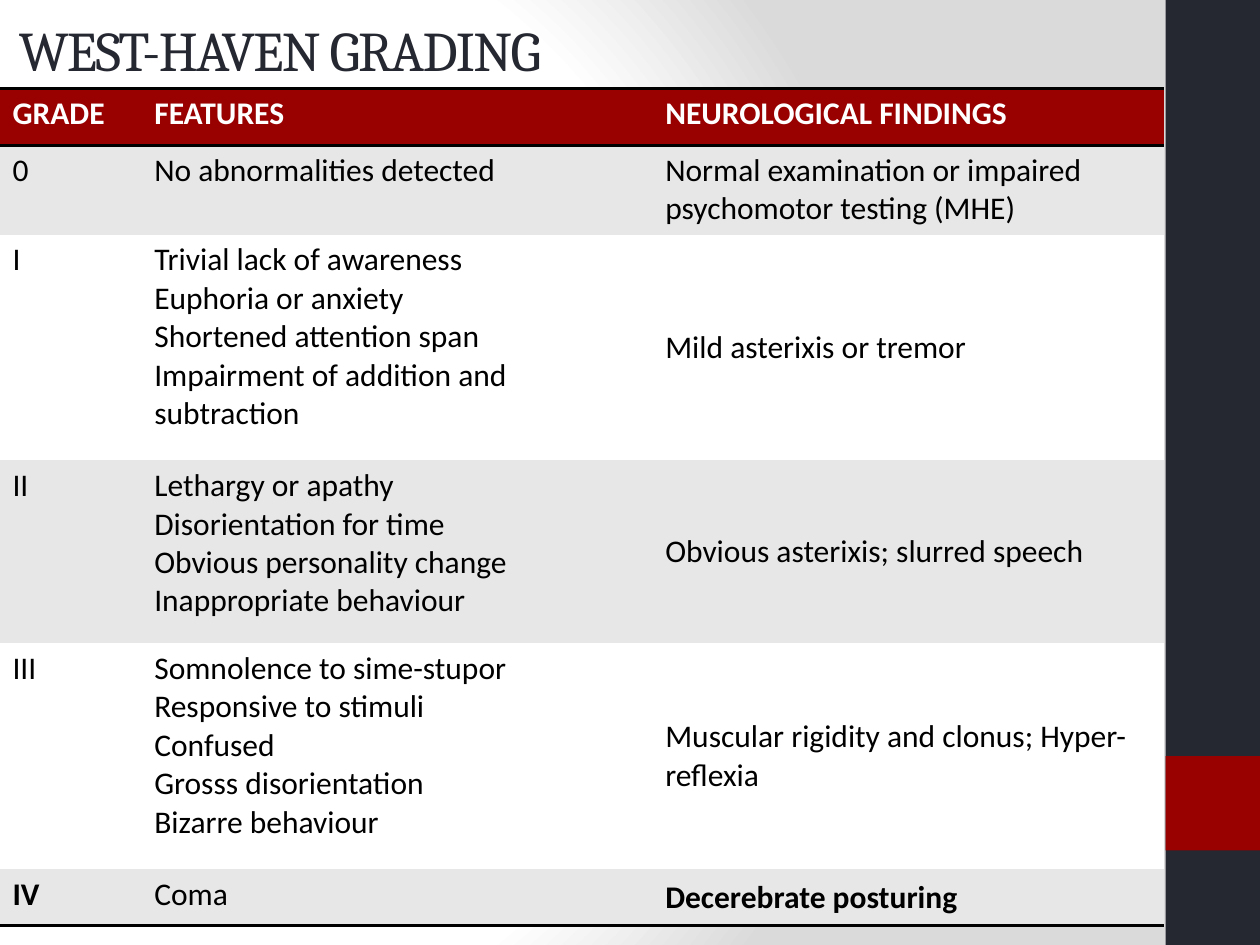
from lxml.etree import SubElement
from pptx import Presentation
from pptx.dml.color import RGBColor
from pptx.enum.shapes import MSO_SHAPE
from pptx.enum.text import MSO_ANCHOR, MSO_AUTO_SIZE, PP_ALIGN
from pptx.oxml import parse_xml
from pptx.oxml.ns import nsdecls, qn
from pptx.util import Pt

COLORS = {"navy": "252731", "red": "990000", "white": "FFFFFF",
          "black": "000000", "band": "E7E7E7", "shade": "DADADA"}

TITLE = "WEST-HAVEN GRADING"
HEADER = ("GRADE", "FEATURES", "NEUROLOGICAL FINDINGS")
GRADES = [
    ("0", ["No abnormalities detected"],
     "Normal examination or impaired psychomotor testing (MHE)"),
    ("I", ["Trivial lack of awareness", "Euphoria or anxiety",
           "Shortened attention span", "Impairment of addition and subtraction"],
     "Mild asterixis or tremor"),
    ("II", ["Lethargy or apathy", "Disorientation for time",
            "Obvious personality change", "Inappropriate behaviour"],
     "Obvious asterixis; slurred speech"),
    ("III", ["Somnolence to sime-stupor", "Responsive to stimuli", "Confused",
             "Grosss disorientation", "Bizarre behaviour"],
     "Muscular rigidity and clonus; Hyper-reflexia"),
    ("IV", ["Coma"], "Decerebrate posturing"),
]
BOLD_TEXTS = {*HEADER, "IV", "Decerebrate posturing"}
COLUMN_WIDTHS = (81, 292, 292)
ROW_HEIGHTS = (32.5, 51.2, 129, 104.5, 129, 32.4)
SIDEBAR = [(0, 540, "navy"), (432, 54, "red")]  # top, height, colour
NO_STYLE = "{2D5ABB26-0587-4C30-8999-92F81FD0307C}"


def rgb(name):
    return RGBColor.from_string(COLORS[name])


def format_font(font, color, **values):
    for name, value in values.items():
        setattr(font, name, value)
    font.color.rgb = rgb(color)


def paint_background(slide):
    """Give the slide a radial gradient, white fading to grey."""
    slide.background.fill.gradient()
    gradient = slide.element.find(".//" + qn("a:gradFill"))
    stops = "".join(
        f'<a:gs pos="{position}000"><a:srgbClr val="{COLORS[color]}"/></a:gs>'
        for position, color in ((0, "white"), (75, "white"), (100, "shade")))
    gradient.getparent().replace(gradient, parse_xml(
        f'<a:gradFill {nsdecls("a")} rotWithShape="1"><a:gsLst>{stops}</a:gsLst>'
        '<a:path path="circle"><a:fillToRect l="20000" t="50000" r="100000" b="50000"/>'
        '</a:path></a:gradFill>'))


def add_sidebar(slide):
    for top, height, color in SIDEBAR:
        shape = slide.shapes.add_shape(
            MSO_SHAPE.RECTANGLE, Pt(666), Pt(top), Pt(54), Pt(height))
        shape.shadow.inherit = False
        shape.fill.solid()
        shape.fill.fore_color.rgb = rgb(color)
        shape.line.fill.background()


def write_title(slide):
    title = slide.shapes.title
    title.left, title.top, title.width, title.height = Pt(3.6), Pt(5.8), Pt(600), Pt(44.6)
    frame = title.text_frame
    frame.text = TITLE
    frame.auto_size = MSO_AUTO_SIZE.NONE
    frame.vertical_anchor = MSO_ANCHOR.MIDDLE
    paragraph = frame.paragraphs[0]
    paragraph.alignment = PP_ALIGN.LEFT
    run = paragraph.runs[0]
    format_font(run.font, "navy", name="Cambria", size=Pt(32))
    run.font._element.set("spc", "-100")


def add_borders(cell, sides):
    """Draw 2 pt black rules; sides are "T" and "B", in that order."""
    properties = cell._tc.get_or_add_tcPr()
    for index, side in enumerate(sides):
        line = parse_xml(f'<a:ln{side} {nsdecls("a")} w="{Pt(2)}"/>')
        fill = SubElement(line, qn("a:solidFill"))
        SubElement(fill, qn("a:srgbClr"), val=COLORS["black"])
        properties.insert(index, line)


def add_grading_table(slide):
    rows = [HEADER] + GRADES
    frame = slide.shapes.add_table(
        len(rows), len(HEADER), Pt(0), Pt(50.4),
        Pt(sum(COLUMN_WIDTHS)), Pt(sum(ROW_HEIGHTS)))
    table = frame.table
    table._tbl.tblPr.find(qn("a:tableStyleId")).text = NO_STYLE
    for column, width in zip(table.columns, COLUMN_WIDTHS):
        column.width = Pt(width)
    for row, height in zip(table.rows, ROW_HEIGHTS):
        row.height = Pt(height)

    for row_index, row in enumerate(rows):
        is_header = row_index == 0
        fill = "red" if is_header else ("band" if row_index % 2 else "white")
        borders = "TB" if is_header else ("B" if row_index == len(rows) - 1 else "")
        for column_index, content in enumerate(row):
            cell = table.cell(row_index, column_index)
            cell.text = content if isinstance(content, str) else "\n".join(content)
            cell.fill.solid()
            cell.fill.fore_color.rgb = rgb(fill)
            add_borders(cell, borders)
            if column_index == 2 and row_index > 1:
                cell.vertical_anchor = MSO_ANCHOR.MIDDLE
            for paragraph in cell.text_frame.paragraphs:
                for run in paragraph.runs:
                    format_font(run.font, "white" if is_header else "black",
                                name="Calibri", size=Pt(18),
                                bold=run.text in BOLD_TEXTS)


def main():
    presentation = Presentation()
    presentation.slide_width, presentation.slide_height = Pt(720), Pt(540)
    slide = presentation.slides.add_slide(presentation.slide_layouts[5])
    paint_background(slide)
    add_sidebar(slide)
    write_title(slide)
    add_grading_table(slide)
    presentation.save("out.pptx")


if __name__ == "__main__":
    main()
